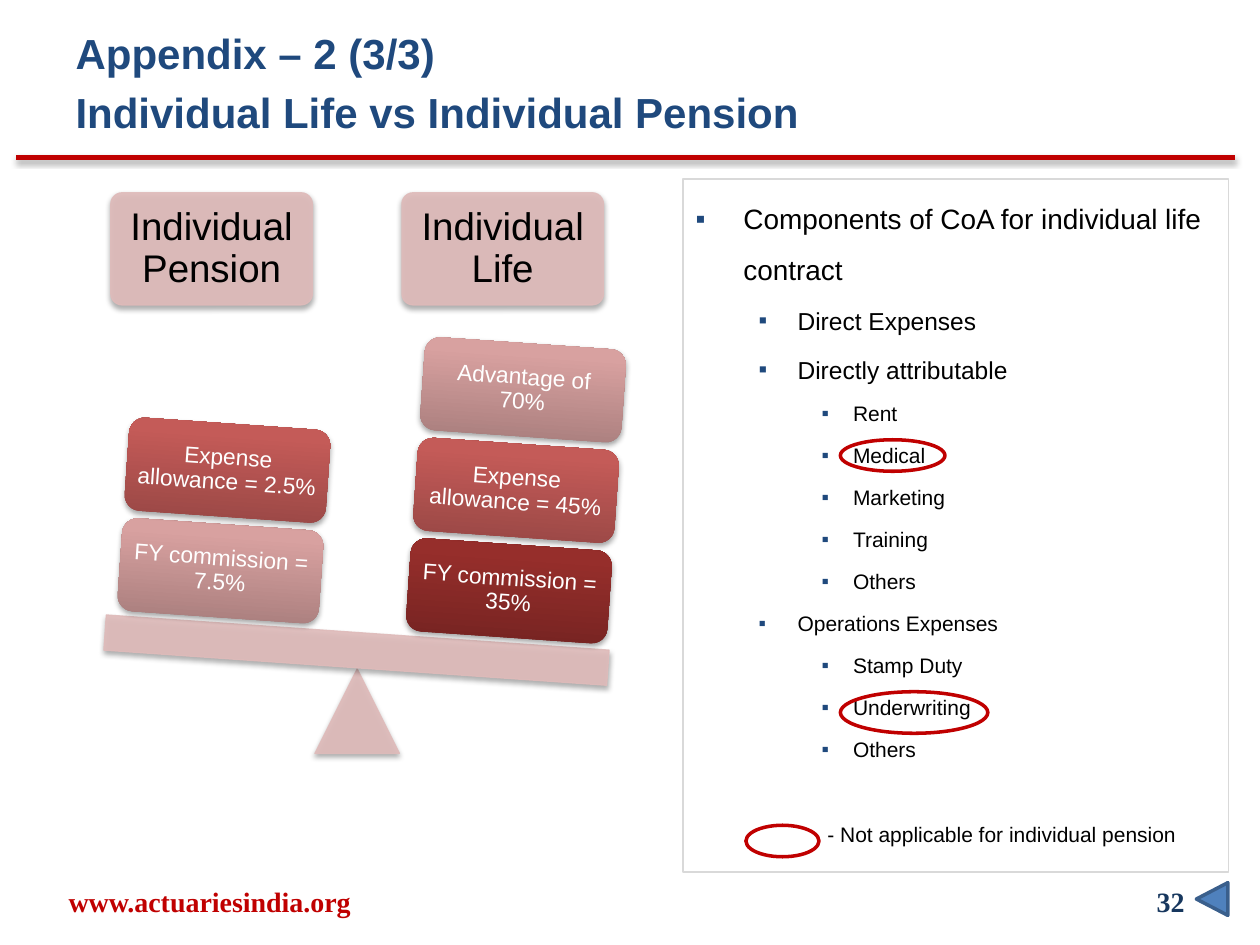
import math
from dataclasses import dataclass

import pptx
import pptx.dml.color
import pptx.enum.shapes
import pptx.enum.text
import pptx.oxml
import pptx.oxml.ns
import pptx.util

Inches, Pt = pptx.util.Inches, pptx.util.Pt
SHAPE = pptx.enum.shapes.MSO_SHAPE
ALIGN = pptx.enum.text.PP_ALIGN
ANCHOR = pptx.enum.text.MSO_ANCHOR
qn = pptx.oxml.ns.qn
NS = 'xmlns:a="http://schemas.openxmlformats.org/drawingml/2006/main"'

COLORS = {
    "navy": "1F497D", "number": "17375E", "red": "C00000", "pink": "DFBBBA",
    "border": "D9D9D9", "arrow": "4F81BD", "arrow_edge": "3A5F8C",
    "black": "000000", "white": "FFFFFF",
}
GRADIENTS = {
    "dark": ("742321", "962E2B", "992C29"),
    "medium": ("974644", "C45B58", "C75957"),
    "light": ("A67C7B", "D8A1A0", "DAA1A0"),
}
TILT = 4  # degrees
BLOCK_STEP = 0.8
SPACE_RATIO = 0.2  # space before a paragraph, as a share of its text size


@dataclass
class Pan:
    heading: str
    heading_left: float
    base_left: float
    base_top: float
    blocks: list[tuple[str, str]]  # from the bottom up: text, gradient


@dataclass
class Bullet:
    level: int
    text: str
    size: int


@dataclass
class Box:
    left: float
    top: float
    width: float
    height: float

    def lengths(self) -> list[int]:
        return [Inches(v) for v in (self.left, self.top, self.width, self.height)]


PANS = [
    Pan("Individual Pension", 0.88, 0.95, 4.16,
        [("FY commission = 7.5%", "light"), ("Expense allowance = 2.5%", "medium")]),
    Pan("Individual Life", 3.19, 3.24, 4.32,
        [("FY commission = 35%", "dark"), ("Expense allowance = 45%", "medium"),
         ("Advantage of 70%", "light")]),
]
BULLETS = [
    Bullet(0, "Components of CoA for individual life contract", 16),
    Bullet(1, "Direct Expenses", 14),
    Bullet(1, "Directly attributable", 14),
    *[Bullet(2, t, 12) for t in ("Rent", "Medical", "Marketing", "Training", "Others")],
    Bullet(1, "Operations Expenses", 12),
    *[Bullet(2, t, 12) for t in ("Stamp Duty", "Underwriting", "Others")],
]
LEGEND = Bullet(2, " - Not applicable for individual pension", 12)
LEGEND_GAP = 26.5
INDENTS = [(0.38, -0.38), (0.81, -0.31), (1.25, -0.25)]
RINGS = [Box(6.67, 3.49, 0.83, 0.25), Box(6.67, 5.49, 1.17, 0.33), Box(5.92, 6.55, 0.58, 0.25)]


def rgb(name: str) -> pptx.dml.color.RGBColor:
    return pptx.dml.color.RGBColor.from_string(COLORS[name])


def add_run(paragraph, text: str, size: float, color: str, font="Arial", bold=False) -> None:
    run = paragraph.add_run()
    run.text = text
    run.font.name, run.font.size, run.font.bold = font, Pt(size), bold
    run.font.color.rgb = rgb(color)


def add_shadow(item, distance: float, opacity: int) -> None:
    properties = item._element.spPr
    effects = properties.find(qn("a:effectLst"))
    if effects is None:
        effects = pptx.oxml.parse_xml(f"<a:effectLst {NS}/>")
        properties.append(effects)
    effects.append(pptx.oxml.parse_xml(
        f'<a:outerShdw {NS} blurRad="{Pt(3.1)}" dist="{Pt(distance)}" dir="5400000" '
        f'rotWithShape="0"><a:srgbClr val="000000"><a:alpha val="{opacity * 1000}"/>'
        "</a:srgbClr></a:outerShdw>"))


def add_plain(slide, preset, box: Box, rotation: float = 0):
    shape = slide.shapes.add_shape(preset, *box.lengths())
    shape.rotation = rotation
    shape.shadow.inherit = False
    return shape


def add_pink(slide, preset, box: Box, rotation: float = 0):
    shape = add_plain(slide, preset, box, rotation)
    shape.fill.solid()
    shape.fill.fore_color.rgb = shape.line.color.rgb = rgb("pink")
    shape.line.width = Pt(0.75)
    for color in shape._element.spPr.iter(qn("a:srgbClr")):
        color.append(pptx.oxml.parse_xml(f'<a:alpha {NS} val="90000"/>'))
    add_shadow(shape, 1.8, 35)
    return shape


def add_block(slide, box: Box, gradient: str):
    shape = add_plain(slide, SHAPE.ROUNDED_RECTANGLE, box, TILT)
    shape.fill.background()
    shape.line.fill.background()
    stops = "".join(f'<a:gs pos="{pos}000"><a:srgbClr val="{color}"/></a:gs>'
                    for pos, color in zip((0, 80, 100), GRADIENTS[gradient]))
    properties = shape._element.spPr
    properties.replace(properties.find(qn("a:noFill")), pptx.oxml.parse_xml(
        f'<a:gradFill {NS} rotWithShape="1"><a:gsLst>{stops}</a:gsLst>'
        '<a:lin ang="16200000" scaled="0"/></a:gradFill>'))
    add_shadow(shape, 1.8, 35)
    return shape


def add_label(shape, text: str, size: float, color: str, inset: float) -> None:
    frame = shape.text_frame
    frame.word_wrap = True
    frame.vertical_anchor = ANCHOR.MIDDLE
    frame.margin_left = frame.margin_right = Inches(inset)
    frame.margin_top = frame.margin_bottom = Inches(inset)
    paragraph = frame.paragraphs[0]
    paragraph.alignment, paragraph.line_spacing = ALIGN.CENTER, 0.9
    add_run(paragraph, text, size, color)


def add_pan(slide, pan: Pan) -> None:
    heading = add_pink(slide, SHAPE.ROUNDED_RECTANGLE, Box(pan.heading_left, 1.53, 1.6, 0.89))
    heading.adjustments[0] = 0.1
    add_label(heading, pan.heading, 22, "black", 0.09)
    angle = math.radians(TILT)
    for i, (text, gradient) in enumerate(pan.blocks):
        left = pan.base_left + i * BLOCK_STEP * math.sin(angle)
        top = pan.base_top - i * BLOCK_STEP * math.cos(angle)
        block = add_block(slide, Box(left, top, 1.6, 0.74), gradient)
        add_label(block, text, 13, "white", 0.05)


def set_indent(paragraph, left: float, first: float, mark: str = "") -> None:
    properties = paragraph._p.get_or_add_pPr()
    properties.set("marL", str(Inches(left)))
    properties.set("indent", str(Inches(first)))
    if mark:
        properties.append(pptx.oxml.parse_xml(
            f'<a:buClr {NS}><a:srgbClr val="{COLORS["navy"]}"/></a:buClr>'))
        properties.append(pptx.oxml.parse_xml(f'<a:buFont {NS} typeface="Arial"/>'))
        properties.append(pptx.oxml.parse_xml(f'<a:buChar {NS} char="{mark}"/>'))
    else:
        properties.append(pptx.oxml.parse_xml(f"<a:buNone {NS}/>"))


def prepare_placeholder(placeholder, box: Box):
    placeholder.left, placeholder.top, placeholder.width, placeholder.height = box.lengths()
    frame = placeholder.text_frame
    frame.word_wrap = True
    frame.auto_size = pptx.enum.text.MSO_AUTO_SIZE.NONE
    frame.vertical_anchor = ANCHOR.TOP
    return frame


def next_paragraph(frame, index: int, space_before: float):
    paragraph = frame.add_paragraph() if index else frame.paragraphs[0]
    paragraph.space_before = Pt(space_before if index else 0)
    return paragraph


def add_footer(slide, box: Box, text: str, color: str, alignment) -> None:
    frame = slide.shapes.add_textbox(*box.lengths()).text_frame
    frame.word_wrap = True
    frame.vertical_anchor = ANCHOR.MIDDLE
    frame.paragraphs[0].alignment = alignment
    add_run(frame.paragraphs[0], text, 16, color, "Times New Roman", True)


def main() -> None:
    deck = pptx.Presentation()
    deck.slide_width, deck.slide_height = Inches(10), Inches(7.5)
    slide = deck.slides.add_slide(deck.slide_layouts[1])

    # Title and rule
    title = prepare_placeholder(slide.shapes.title, Box(0.5, 0.17, 8.25, 1))
    for i, text in enumerate(("Appendix – 2 (3/3)", "Individual Life vs Individual Pension")):
        paragraph = next_paragraph(title, i, SPACE_RATIO * 24)
        paragraph.alignment = ALIGN.LEFT
        set_indent(paragraph, 0.38, -0.38)
        add_run(paragraph, text, 24, "navy", bold=True)
    rule = slide.shapes.add_connector(pptx.enum.shapes.MSO_CONNECTOR.STRAIGHT,
                                      Inches(0.13), Inches(1.25), Inches(9.8), Inches(1.25))
    rule.line.color.rgb, rule.line.width = rgb("red"), Pt(3)
    add_shadow(rule, 1.6, 38)

    # Balance
    add_pink(slide, SHAPE.ISOSCELES_TRIANGLE, Box(2.5, 5.31, 0.67, 0.67))
    add_pink(slide, SHAPE.RECTANGLE, Box(0.83, 5.02, 4, 0.28), TILT)
    for pan in PANS:
        add_pan(slide, pan)

    # Cost components
    components = slide.placeholders[1]
    components.line.color.rgb, components.line.width = rgb("border"), Pt(0.75)
    frame = prepare_placeholder(components, Box(5.42, 1.42, 4.33, 5.5))
    for i, bullet in enumerate([*BULLETS, LEGEND]):
        is_legend = bullet is LEGEND
        paragraph = next_paragraph(frame, i, LEGEND_GAP if is_legend else SPACE_RATIO * bullet.size)
        paragraph.level, paragraph.line_spacing = bullet.level, 1.5
        set_indent(paragraph, *INDENTS[bullet.level], "" if is_legend else "▪")
        add_run(paragraph, bullet.text, bullet.size, "black")
    for box in RINGS:
        ring = add_plain(slide, SHAPE.OVAL, box)
        ring.fill.background()
        ring.line.color.rgb, ring.line.width = rgb("red"), Pt(2)

    # Footer
    add_footer(slide, Box(0.08, 6.95, 3.17, 0.4), "www.actuariesindia.org", "red", ALIGN.CENTER)
    add_footer(slide, Box(7.17, 6.95, 2.33, 0.4), "32", "number", ALIGN.RIGHT)
    back = add_plain(slide, SHAPE.ISOSCELES_TRIANGLE, Box(9.49, 7.01, 0.26, 0.25), 270)
    back.fill.solid()
    back.fill.fore_color.rgb = rgb("arrow")
    back.line.color.rgb, back.line.width = rgb("arrow_edge"), Pt(2)

    deck.save("out.pptx")


if __name__ == "__main__":
    main()
